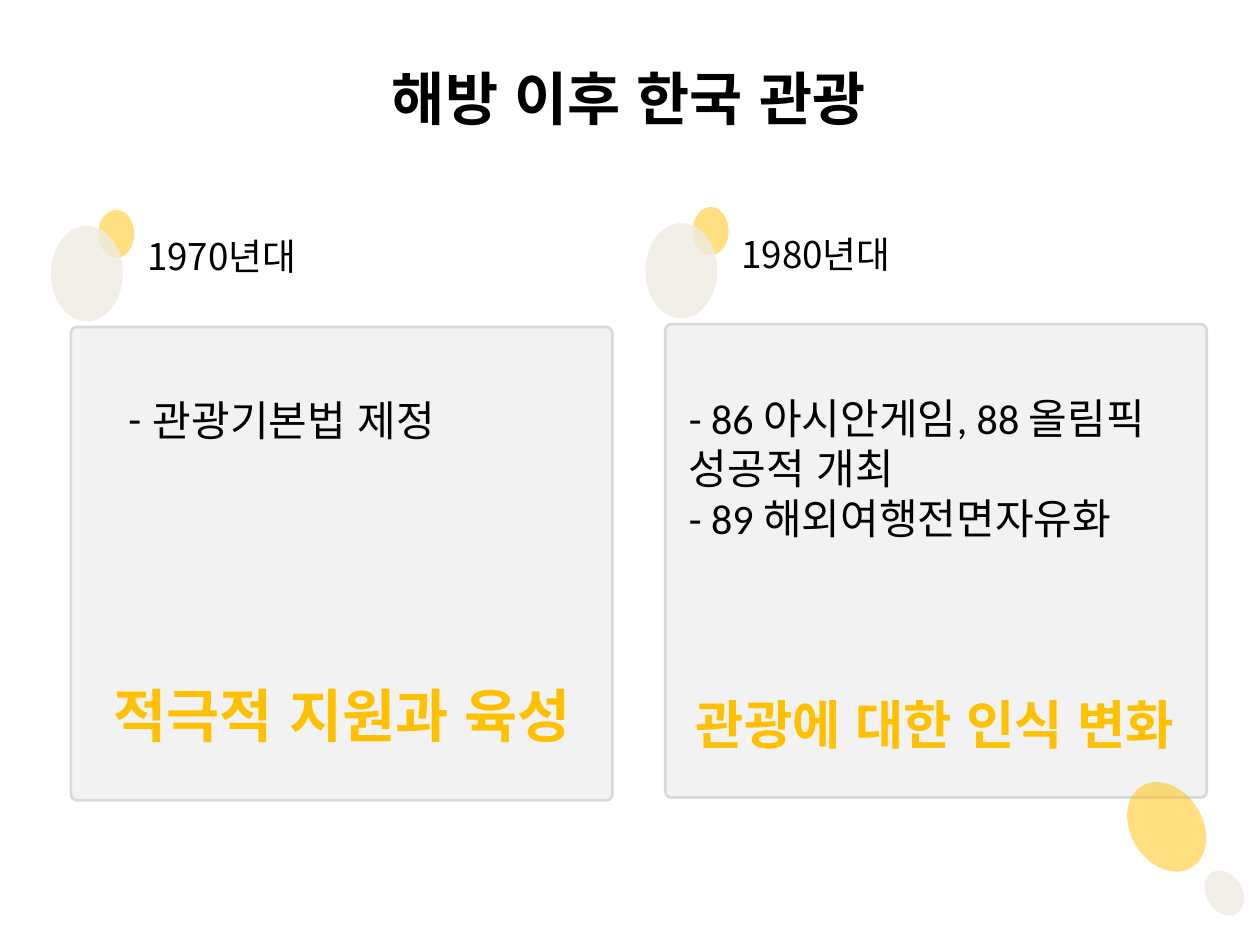
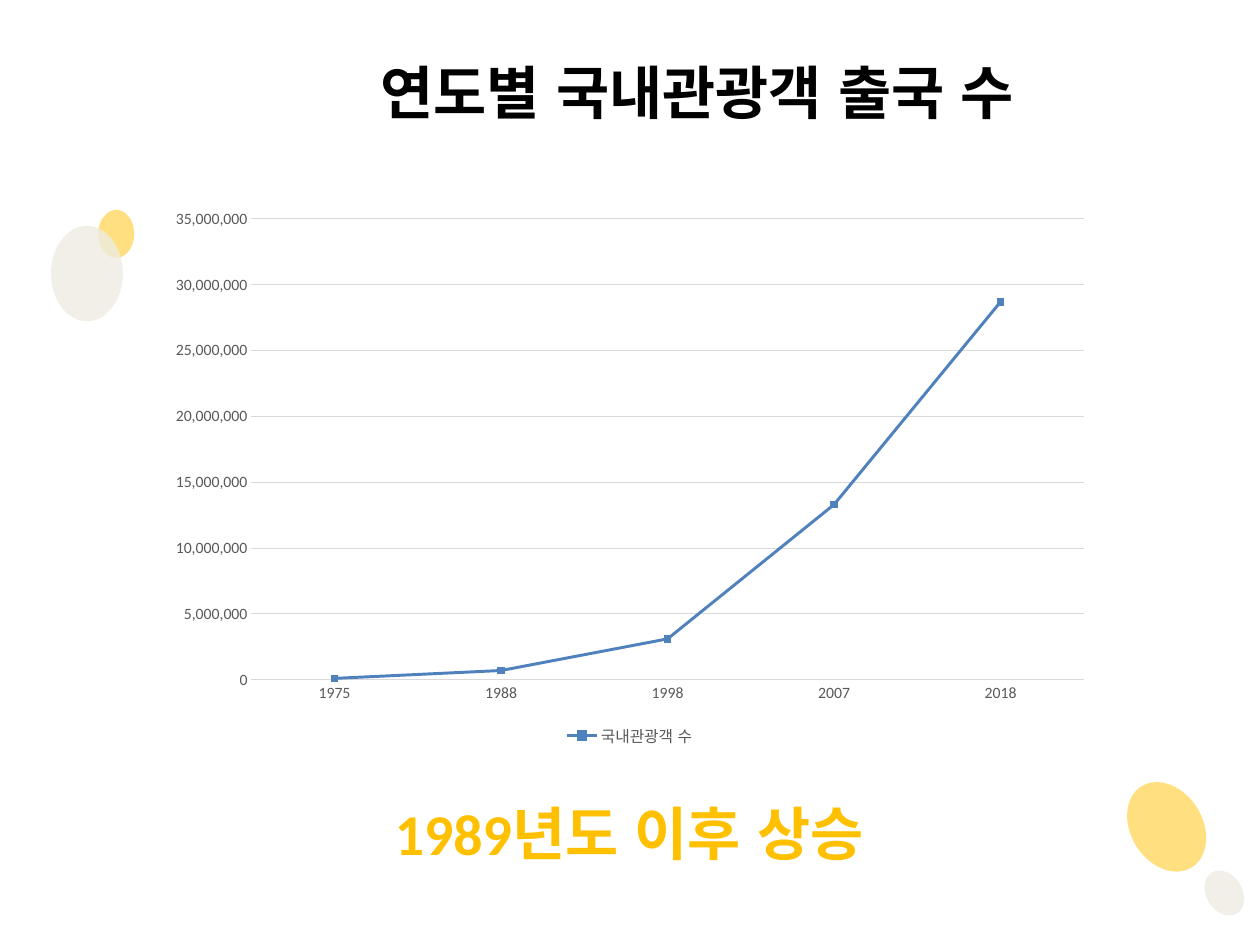
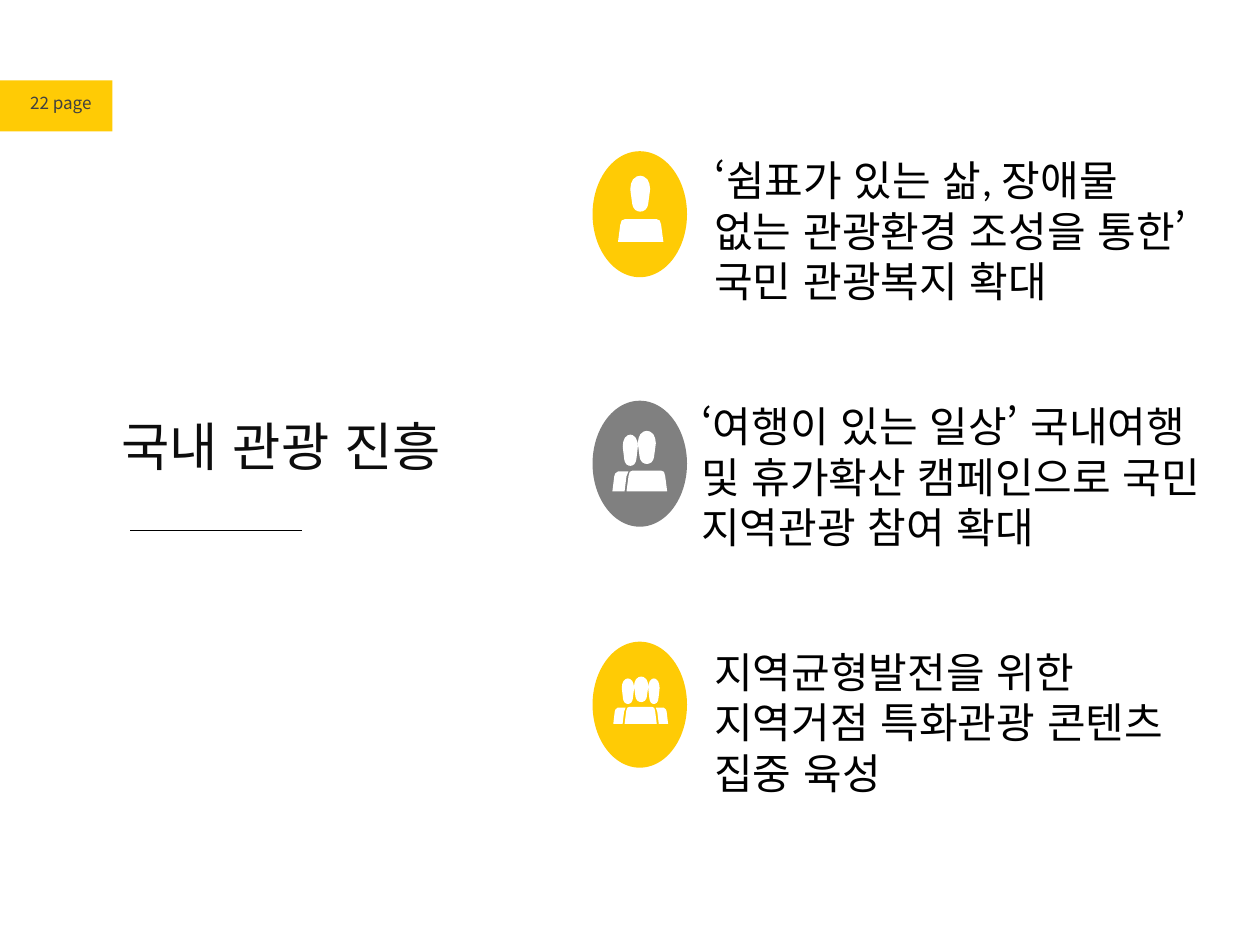
from dataclasses import dataclass
from typing import NamedTuple

from lxml import etree
from pptx import Presentation
from pptx.chart.data import CategoryChartData
from pptx.dml.color import RGBColor
from pptx.enum.chart import XL_CHART_TYPE, XL_LEGEND_POSITION, XL_MARKER_STYLE, XL_TICK_MARK
from pptx.enum.lang import MSO_LANGUAGE_ID
from pptx.enum.shapes import MSO_CONNECTOR, MSO_SHAPE
from pptx.enum.text import MSO_AUTO_SIZE, PP_ALIGN
from pptx.oxml.ns import qn
from pptx.util import Inches, Pt

OVAL, RECTANGLE, ROUNDED = MSO_SHAPE.OVAL, MSO_SHAPE.RECTANGLE, MSO_SHAPE.ROUNDED_RECTANGLE
STRAIGHT = MSO_CONNECTOR.STRAIGHT
LEFT, CENTER = PP_ALIGN.LEFT, PP_ALIGN.CENTER
FIT_SHAPE = MSO_AUTO_SIZE.SHAPE_TO_FIT_TEXT
KOREAN_LANGUAGE = MSO_LANGUAGE_ID.KOREAN
LINE_MARKERS = XL_CHART_TYPE.LINE_MARKERS
LEGEND_BOTTOM = XL_LEGEND_POSITION.BOTTOM
SQUARE, NO_TICK = XL_MARKER_STYLE.SQUARE, XL_TICK_MARK.NONE

# Slide size and its grid of 40 columns by 30 rows
WIDTH, HEIGHT = Inches(13.33), Inches(10)
COLUMN, ROW = WIDTH / 40, HEIGHT / 30

# Colours and fonts
BLACK, WHITE = "000000", "FFFFFF"
GOLD, YELLOW, BEIGE = "FFC000", "FFCB05", "EEECE1"
PANEL, RULE, GRAY = "F2F2F2", "D9D9D9", "808080"
HEADING, LABEL, FOOTER = "0D0D0D", "595959", "404040"
LATIN, KOREAN = "Calibri", "Noto Sans CJK KR"


class Box(NamedTuple):
    column: float
    row: float
    columns: float
    rows: float

    def shifted(self, columns: float, rows: float) -> "Box":
        return Box(self.column + columns, self.row + rows, self.columns, self.rows)

    def lengths(self) -> list[int]:
        return [round(value * unit) for value, unit in zip(self, (COLUMN, ROW, COLUMN, ROW))]


@dataclass(frozen=True)
class TextStyle:
    size: float
    name: str = LATIN
    color: str = BLACK
    bold: bool = False
    alignment: PP_ALIGN = LEFT
    spacing: float = 1.0
    bullet: str = ""


@dataclass(frozen=True)
class Oval:
    box: Box
    color: str
    opacity: int
    rotation: float = 0


@dataclass(frozen=True)
class Decade:
    label: str
    body: list[str]
    body_box: Box
    body_style: TextStyle
    slogan: str
    slogan_box: Box
    slogan_size: int


@dataclass(frozen=True)
class Part:
    outline: list[tuple[float, float]]
    box: Box


@dataclass(frozen=True)
class Policy:
    row: float
    color: str
    text: str
    text_box: Box
    icon: list[Part]


class ChartSeries(NamedTuple):
    name: str
    values: list[int | None]
    color: str


TITLE = TextStyle(44, KOREAN, bold=True, alignment=CENTER)
SLOGAN = TextStyle(44, color=GOLD, bold=True, alignment=CENTER)
BODY = TextStyle(32)
DECADE_LABEL = TextStyle(28, KOREAN, alignment=CENTER)

# Ovals beside the content and in the lower right corner
SIDE_OVALS = [
    Oval(Box(3.12, 6.66, 1.14, 1.53), GOLD, 50),
    Oval(Box(1.62, 7.17, 2.28, 3.03), BEIGE, 80),
]
CORNER_BEIGE = Oval(Box(38.1, 27.78, 1.53, 1.14), BEIGE, 80, 58.3)
CORNER_GOLD = Oval(Box(35.52, 25.11, 3.03, 2.28), GOLD, 50, 58.3)

# The second decade repeats the first at this distance
DECADE_STEP = (18.87, -0.09)
DECADE_LABEL_BOX = Box(4.26, 7.29, 5.55, 1.71)
PANEL_BOX = Box(2.25, 10.38, 17.19, 15.03)
DECADES = [
    Decade("1970년대", [" 관광기본법 제정"], Box(3.78, 12.39, 13.47, 1.92),
           TextStyle(32, bullet="-"),
           "적극적 지원과 육성", Box(2.34, 21.42, 17.07, 2.52), 44),
    Decade("1980년대", ["- 86 아시안게임, 88 올림픽 성공적 개최", "- 89 해외여행전면자유화"],
           Box(21.57, 12.3, 15.78, 5.16), BODY,
           "관광에 대한 인식 변화", Box(21, 21.81, 17.37, 2.31), 40),
]

# Departures by year; only the first series has values and a legend entry
YEARS = ["1975", "1988", "1998", "2007", "2018"]
DEPARTURES = [
    ChartSeries("국내관광객 수", [100000, 700000, 3100000, 13300000, 28700000], "4F81BD"),
    ChartSeries("Series 2", [None] * len(YEARS), "C0504D"),
    ChartSeries("Series 3", [None] * len(YEARS), "9BBB59"),
]


# Outlines of the people icons, as shares of their boxes
def mirror(points: list[tuple[float, float]]) -> list[tuple[float, float]]:
    return [(1 - x, y) for x, y in reversed(points)]


HEAD_SIDE = [(0.5, 0), (0.67, 0.02), (0.86, 0.1), (0.96, 0.22), (1, 0.37), (0.98, 0.47),
             (0.9, 0.79), (0.86, 0.87), (0.76, 0.95), (0.62, 0.99), (0.5, 1)]
HEAD = HEAD_SIDE + mirror(HEAD_SIDE)
SHOULDER = [(0, 1), (0.05, 0.25), (0.08, 0.06), (0.15, 0)]
TORSO = SHOULDER + mirror(SHOULDER)
LEFT_TORSO = [(0, 1), (0.12, 0.24), (0.18, 0.1), (0.35, 0), (1, 0), (0.88, 0.24), (0.76, 1)]
RIGHT_TORSO = mirror(LEFT_TORSO)

MEDALLION = Box(18.81, 0, 3, 4)
ONE_PERSON = [Part(HEAD, Box(1.2, 0.78, 0.63, 1.14)), Part(TORSO, Box(0.81, 2.16, 1.44, 0.72))]
TWO_PEOPLE = [
    Part(HEAD, Box(0.96, 1.08, 0.48, 0.99)), Part(LEFT_TORSO, Box(0.63, 2.25, 0.51, 0.63)),
    Part(HEAD, Box(1.44, 0.96, 0.57, 1.05)), Part(TORSO, Box(1.08, 2.22, 1.29, 0.66)),
]
THREE_PEOPLE = [
    Part(HEAD, Box(0.93, 1.17, 0.39, 0.81)), Part(LEFT_TORSO, Box(0.66, 2.1, 0.39, 0.51)),
    Part(HEAD, Box(1.32, 1.11, 0.45, 0.81)), Part(TORSO, Box(1.02, 2.07, 1.02, 0.54)),
    Part(HEAD, Box(1.77, 1.17, 0.36, 0.81)), Part(RIGHT_TORSO, Box(2.01, 2.1, 0.39, 0.51)),
]
POLICIES = [
    Policy(4.8, YELLOW, "‘쉼표가 있는 삶, 장애물 없는 관광환경 조성을 통한’ 국민 관광복지 확대",
           Box(22.38, 4.77, 15.87, 5.16), ONE_PERSON),
    Policy(12.72, GRAY, "‘여행이 있는 일상’ 국내여행 및 휴가확산 캠페인으로 국민 지역관광 참여 확대",
           Box(21.96, 12.57, 16.68, 5.16), TWO_PEOPLE),
    Policy(20.37, YELLOW, "지역균형발전을 위한 지역거점 특화관광 콘텐츠 집중 육성",
           Box(22.38, 20.37, 15.18, 5.16), THREE_PEOPLE),
]


# Drawing functions
def rgb(color: str) -> RGBColor:
    return RGBColor.from_string(color)


def apply(target, values: dict) -> None:
    for name, value in values.items():
        setattr(target, name, value)


def format_font(font, size: float, name: str, color: str, bold: bool = False) -> None:
    apply(font, {"size": Pt(size), "name": name, "bold": bold, "language_id": KOREAN_LANGUAGE})
    font.color.rgb = rgb(color)


def paint(shape, color: str) -> None:
    shape.shadow.inherit = False
    shape.fill.solid()
    shape.fill.fore_color.rgb = rgb(color)
    shape.line.fill.background()


def outline(line, color: str, width: float) -> None:
    line.color.rgb = rgb(color)
    line.width = Pt(width)


def add_text(shapes, box: Box, lines: list[str], style: TextStyle) -> None:
    frame = shapes.add_textbox(*box.lengths()).text_frame
    apply(frame, {"word_wrap": True, "auto_size": FIT_SHAPE})
    for index, line in enumerate(lines):
        paragraph = frame.add_paragraph() if index else frame.paragraphs[0]
        apply(paragraph, {"alignment": style.alignment, "line_spacing": style.spacing})
        run = paragraph.add_run()
        run.text = line
        format_font(run.font, style.size, style.name, style.color, style.bold)
        if style.bullet:
            properties = paragraph._p.get_or_add_pPr()
            etree.SubElement(properties, qn("a:buFont"), typeface=style.name)
            etree.SubElement(properties, qn("a:buChar"), char=style.bullet)


def add_preset(shapes, preset: MSO_SHAPE, box: Box, color: str):
    shape = shapes.add_shape(preset, *box.lengths())
    paint(shape, color)
    return shape


def add_oval(shapes, oval: Oval, columns: float = 0, rows: float = 0) -> None:
    shape = add_preset(shapes, OVAL, oval.box.shifted(columns, rows), oval.color)
    shape.rotation = oval.rotation
    color = shape._element.spPr.find(qn("a:solidFill"))[0]
    etree.SubElement(color, qn("a:alpha"), val=str(oval.opacity * 1000))


def add_icon(shapes, parts: list[Part], column: float, row: float) -> None:
    contours = []
    for part in parts:
        left, top, width, height = part.box.shifted(column, row).lengths()
        contours.append([(round(left + x * width), round(top + y * height))
                         for x, y in part.outline])
    builder = shapes.build_freeform(*contours[0][0])
    for index, contour in enumerate(contours):
        if index:
            builder.move_to(*contour[0])
        builder.add_line_segments(contour[1:], close=True)
    paint(builder.convert_to_shape(), WHITE)


def add_rule(shapes, column: float, row: float, columns: float) -> None:
    left, top, width, _ = Box(column, row, columns, 0).lengths()
    rule = shapes.add_connector(STRAIGHT, left, top, left + width, top)
    outline(rule.line, BLACK, 0.75)
    etree.SubElement(rule._element.spPr, qn("a:effectLst"))


def hide_legend_entry(legend, index: int) -> None:
    entry = etree.Element(qn("c:legendEntry"))
    etree.SubElement(entry, qn("c:idx"), val=str(index))
    etree.SubElement(entry, qn("c:delete"), val="1")
    legend._element.find(qn("c:legendPos")).addnext(entry)


def add_departures_chart(shapes, box: Box) -> None:
    data = CategoryChartData(number_format="#,##0")
    data.categories = YEARS
    for item in DEPARTURES:
        data.add_series(item.name, item.values)
    chart = shapes.add_chart(LINE_MARKERS, *box.lengths(), data).chart
    apply(chart, {"has_title": False, "has_legend": True})
    apply(chart.legend, {"position": LEGEND_BOTTOM, "include_in_layout": False})
    format_font(chart.font, 10, LATIN, BLACK)
    format_font(chart.legend.font, 12, LATIN, LABEL)
    chart.plots[0].vary_by_categories = False

    for axis in (chart.category_axis, chart.value_axis):
        apply(axis, {"major_tick_mark": NO_TICK, "minor_tick_mark": NO_TICK})
        format_font(axis.tick_labels.font, 12, LATIN, LABEL)
    outline(chart.category_axis.format.line, RULE, 0.75)
    chart.value_axis.format.line.fill.background()
    outline(chart.value_axis.major_gridlines.format.line, RULE, 0.75)
    apply(chart.value_axis.tick_labels,
          {"number_format": "#,##0", "number_format_is_linked": False})

    for series, item in zip(chart.plots[0].series, DEPARTURES):
        series.smooth = False
        outline(series.format.line, item.color, 2.25)
        apply(series.marker, {"style": SQUARE, "size": 5})
        series.marker.format.fill.solid()
        series.marker.format.fill.fore_color.rgb = rgb(item.color)
        outline(series.marker.format.line, item.color, 0.75)
    for index in reversed(range(1, len(DEPARTURES))):
        hide_legend_entry(chart.legend, index)


# Slides
def build_decades(shapes) -> None:
    add_text(shapes, Box(11.28, 1.86, 17.37, 2.52), ["해방 이후 한국 관광"], TITLE)
    add_oval(shapes, CORNER_BEIGE)
    for index, decade in enumerate(DECADES):
        shift = [index * step for step in DECADE_STEP]
        add_text(shapes, DECADE_LABEL_BOX.shifted(*shift), [decade.label], DECADE_LABEL)
        for oval in SIDE_OVALS:
            add_oval(shapes, oval, *shift)
        panel = add_preset(shapes, ROUNDED, PANEL_BOX.shifted(*shift), PANEL)
        panel.adjustments[0] = 0.013
        outline(panel.line, RULE, 2)
        slogan_style = TextStyle(decade.slogan_size, color=GOLD, bold=True, alignment=CENTER)
        add_text(shapes, decade.slogan_box, [decade.slogan], slogan_style)
        add_text(shapes, decade.body_box, decade.body, decade.body_style)
    add_oval(shapes, CORNER_GOLD)


def build_departures(shapes) -> None:
    add_text(shapes, Box(10.68, 1.65, 22.92, 2.52), ["연도별 국내관광객 출국 수"], TITLE)
    for oval in [*SIDE_OVALS, CORNER_BEIGE, CORNER_GOLD]:
        add_oval(shapes, oval)
    add_departures_chart(shapes, Box(4.98, 6.3, 30.03, 17.55))
    add_text(shapes, Box(9.48, 25.17, 21, 2.52), ["1989년도 이후 상승"], SLOGAN)


def build_policies(shapes) -> None:
    add_preset(shapes, RECTANGLE, Box(0, 2.55, 3.57, 1.62), YELLOW)
    add_text(shapes, Box(0.66, 2.46, 2.91, 1.29), ["22 page"],
             TextStyle(13, KOREAN, FOOTER, spacing=1.5))
    add_text(shapes, Box(3.57, 12.99, 12.54, 2.31), ["국내 관광 진흥"],
             TextStyle(40, KOREAN, HEADING))
    add_rule(shapes, 4.14, 16.83, 5.46)
    for policy in POLICIES:
        group = shapes.add_group_shape().shapes
        add_preset(group, OVAL, MEDALLION.shifted(0, policy.row), policy.color)
        add_icon(group, policy.icon, MEDALLION.column, policy.row)
        add_text(group, policy.text_box, [policy.text], BODY)


def main() -> None:
    presentation = Presentation()
    apply(presentation, {"slide_width": WIDTH, "slide_height": HEIGHT})
    for build in (build_decades, build_departures, build_policies):
        slide = presentation.slides.add_slide(presentation.slide_layouts[6])
        slide.background.fill.solid()
        slide.background.fill.fore_color.rgb = rgb(WHITE)
        build(slide.shapes)
    presentation.save("out.pptx")


if __name__ == "__main__":
    main()
